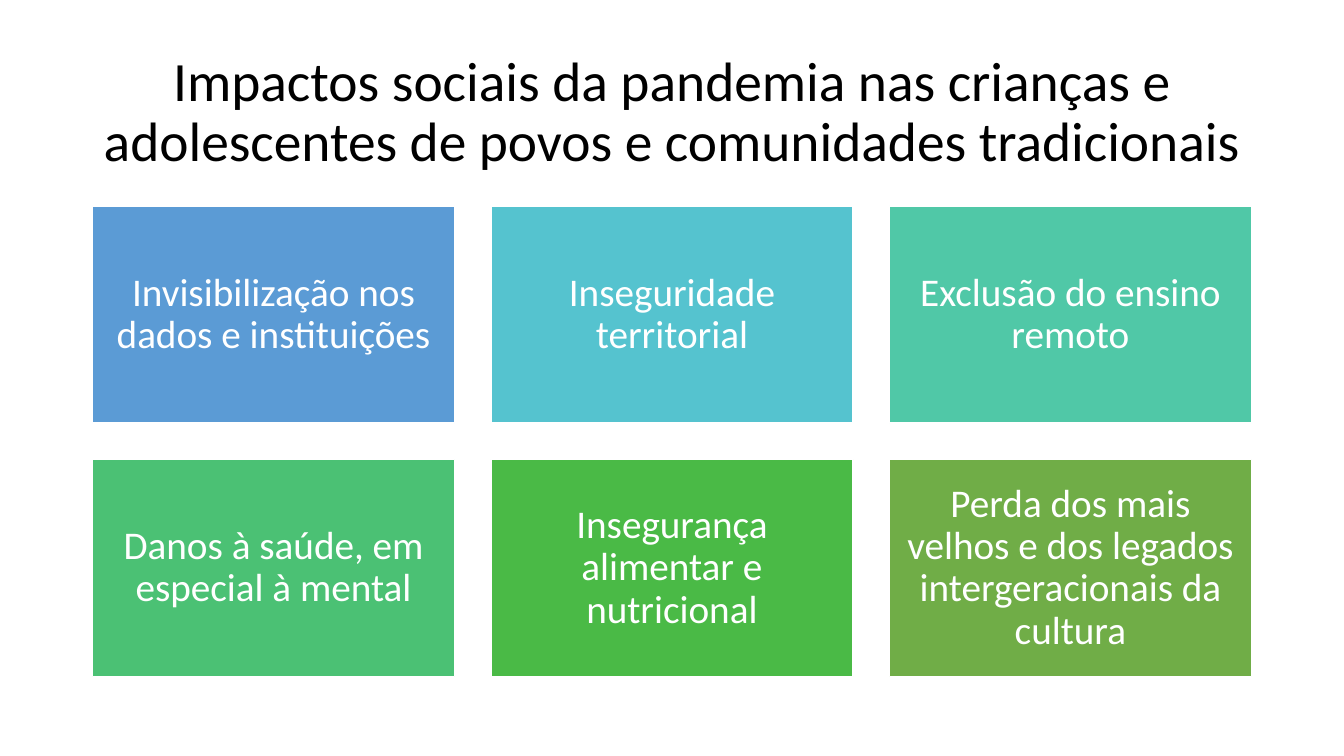
from pptx import Presentation
from pptx.dml.color import RGBColor
from pptx.enum.shapes import MSO_SHAPE
from pptx.enum.text import MSO_ANCHOR, MSO_AUTO_SIZE, PP_ALIGN
from pptx.util import Pt

BLACK = RGBColor(0x00, 0x00, 0x00)
WHITE = RGBColor(0xFF, 0xFF, 0xFF)
BLUE = RGBColor(0x5B, 0x9B, 0xD5)
CYAN = RGBColor(0x55, 0xC3, 0xCF)
TEAL = RGBColor(0x50, 0xC8, 0xA7)
MINT = RGBColor(0x4B, 0xC1, 0x74)
GREEN = RGBColor(0x4A, 0xBA, 0x46)
OLIVE = RGBColor(0x70, 0xAD, 0x47)

TITLE = ("Impactos sociais da pandemia nas crianças e "
         "adolescentes de povos e comunidades tradicionais")
TILES = [
    ("Invisibilização nos dados e instituições", BLUE),
    ("Inseguridade territorial", CYAN),
    ("Exclusão do ensino remoto", TEAL),
    ("Danos à saúde, em especial à mental", MINT),
    ("Insegurança alimentar e nutricional", GREEN),
    ("Perda dos mais velhos e dos legados intergeracionais da cultura", OLIVE),
]

# Grid of tiles, in points
COLS = 3
LEFT, TOP = 66, 147
WIDE, HIGH = 258.75, 155.25
GAP = 25.87
INSET = 8.4

FRAME = {"word_wrap": True, "auto_size": MSO_AUTO_SIZE.NONE,
         "vertical_anchor": MSO_ANCHOR.MIDDLE}
SIDES = ("margin_left", "margin_top", "margin_right", "margin_bottom")
PARA = {"alignment": PP_ALIGN.CENTER, "line_spacing": 0.9}


def assign(item, values):
    for name, value in values.items():
        setattr(item, name, value)


def write(shape, text, size, color):
    frame = shape.text_frame
    assign(frame, FRAME)
    para = frame.paragraphs[0]
    assign(para, PARA)
    run = para.add_run()
    run.text = text
    assign(run.font, {"name": "Calibri", "size": Pt(size)})
    run.font.color.rgb = color


def add_title(slide):
    title = slide.shapes.title
    assign(title, {"left": Pt(66), "top": Pt(28.75),
                   "width": Pt(828), "height": Pt(104.38)})
    write(title, TITLE, 39.6, BLACK)


def add_tile(slide, index, text, color):
    row, col = divmod(index, COLS)
    left = LEFT + col * (WIDE + GAP)
    top = TOP + row * (HIGH + GAP)
    tile = slide.shapes.add_shape(
        MSO_SHAPE.RECTANGLE, Pt(left), Pt(top), Pt(WIDE), Pt(HIGH))
    tile.shadow.inherit = False
    tile.fill.solid()
    tile.fill.fore_color.rgb = color
    tile.line.color.rgb = WHITE
    tile.line.width = Pt(1)
    assign(tile.text_frame, dict.fromkeys(SIDES, Pt(INSET)))
    write(tile, text, 28, WHITE)


def main():
    deck = Presentation()
    assign(deck, {"slide_width": Pt(960), "slide_height": Pt(540)})
    slide = deck.slides.add_slide(deck.slide_layouts[5])

    # Heading
    add_title(slide)

    # Six impacts, row by row
    for index, (text, color) in enumerate(TILES):
        add_tile(slide, index, text, color)

    deck.save("out.pptx")


if __name__ == "__main__":
    main()
